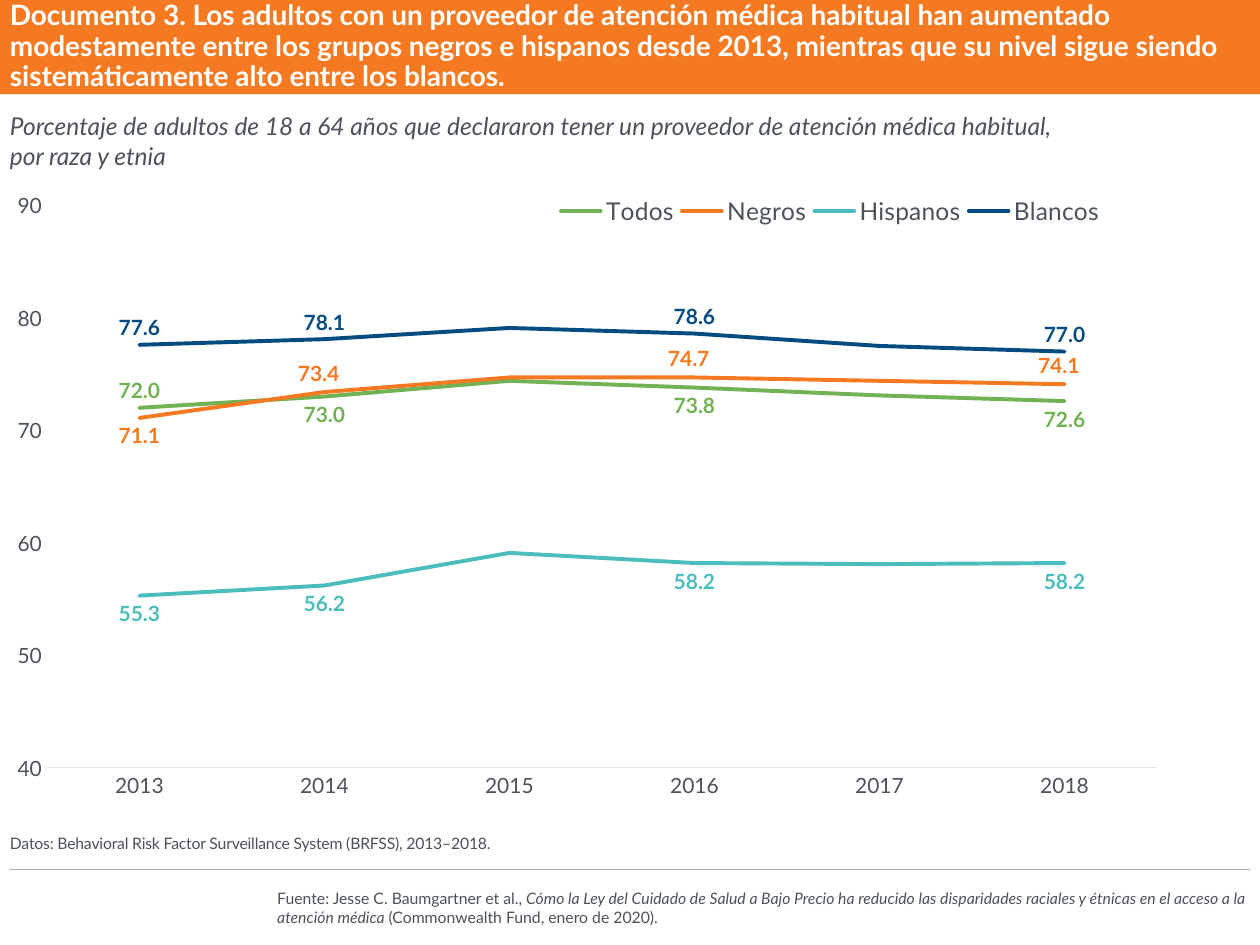
from lxml.etree import SubElement as Sub
from pptx import Presentation
from pptx.chart.data import CategoryChartData as Data
from pptx.dml.color import RGBColor as Rgb
from pptx.enum.chart import XL_CHART_TYPE as Kind, XL_LABEL_POSITION as Pos
from pptx.enum.chart import XL_LEGEND_POSITION as Side, XL_TICK_MARK as Tick
from pptx.enum.shapes import MSO_CONNECTOR as Link, MSO_SHAPE as Form
from pptx.enum.text import MSO_ANCHOR as Anchor, PP_ALIGN as Align
from pptx.oxml.ns import qn
from pptx.oxml.xmlchemy import OxmlElement as Elem
from pptx.util import Cm, Pt

FACE = "Lato"
INK, ORANGE, WHITE = "4C515A", "F47920", "FFFFFF"
YEARS = ["2013", "2014", "2015", "2016", "2017", "2018"]
UP, DOWN = Pos.ABOVE, Pos.BELOW
LINES = [
    ("Todos", "71B254", DOWN, UP, [72, 73, 74.4, 73.8, 73.1, 72.6]),
    ("Negros", ORANGE, UP, DOWN, [71.1, 73.4, 74.7, 74.7, 74.4, 74.1]),
    ("Hispanos", "4ABDBC", DOWN, DOWN, [55.3, 56.2, 59.1, 58.2, 58.1, 58.2]),
    ("Blancos", "044C7F", UP, UP, [77.6, 78.1, 79.1, 78.6, 77.5, 77]),
]


def paint(target, color):
    target.rgb = Rgb.from_string(color)


def style(font, size, color=INK, bold=False, italic=False):
    font.name, font.size = FACE, Pt(size)
    font.bold, font.italic = bold, italic
    paint(font.color, color)


def write(para, text, size, spc=None, **look):
    for i, part in enumerate(text.split("\n")):
        if i:
            para.add_line_break()
        run = para.add_run()
        run.text = part
        style(run.font, size, **look)
        if spc is not None:
            run.font._element.set("spc", str(spc))


def place(shape, box):
    shape.left, shape.top, shape.width, shape.height = [Cm(v) for v in box]


def set_up(shape, anchor):
    frame = shape.text_frame
    frame.word_wrap = True
    frame.vertical_anchor = anchor
    frame.margin_left = frame.margin_right = 0
    frame.margin_top = frame.margin_bottom = 0
    para = frame.paragraphs[0]
    para.alignment = Align.LEFT
    return para


def add_text(slide, box):
    return set_up(slide.shapes.add_textbox(*[Cm(v) for v in box]), Anchor.MIDDLE)


def add_band(slide, box):
    band = slide.shapes.add_shape(Form.RECTANGLE, *[Cm(v) for v in box])
    band.shadow.inherit = False
    band.fill.solid()
    paint(band.fill.fore_color, ORANGE)
    band.line.fill.background()
    slide.shapes._spTree.insert(2, band._element)


def add_rule(slide, left, right, y):
    rule = slide.shapes.add_connector(Link.STRAIGHT, Cm(left), Cm(y), Cm(right), Cm(y))
    rule.line.width = Pt(0.75)
    paint(rule.line.color, "ABABAB")
    Sub(rule._element.spPr, qn("a:effectLst"))


def lay_out(parent, spot, inner=False, **sizes):
    for old in parent.findall(qn("c:layout")):
        parent.remove(old)
    layout = Elem("c:layout")
    manual = Sub(layout, qn("c:manualLayout"))
    if inner:
        Sub(manual, qn("c:layoutTarget")).set("val", "inner")
    if "w" in sizes:
        for mode in ("xMode", "yMode"):
            Sub(manual, qn("c:" + mode)).set("val", "edge")
    for key, val in sizes.items():
        Sub(manual, qn("c:" + key)).set("val", str(val))
    parent.insert(spot, layout)


def label(line, color, main, first):
    tags = line.data_labels
    tags.show_value = True
    tags.number_format, tags.number_format_is_linked = "#,##0.0", False
    tags.position = main
    style(tags.font, 12, color, bold=True)
    for idx in (4, 2):
        gone = Elem("c:dLbl")
        Sub(gone, qn("c:idx")).set("val", str(idx))
        Sub(gone, qn("c:delete")).set("val", "1")
        tags._element.insert(0, gone)
    if first != main:
        tag = line.points[0].data_label
        style(tag.font, 12, color, bold=True)
        tag.position = first


def nudge(line, color):
    for idx in (1, 3, 5):
        tag = line.points[idx].data_label
        style(tag.font, 12, color, bold=True)
        tag.position = UP
        lay_out(tag._get_or_add_dLbl(), 1, x=-0.005, y=-0.003)


def add_lines(slide, box):
    data = Data(number_format="#,##0.0")
    data.categories = YEARS
    for name, _, _, _, vals in LINES:
        data.add_series(name, vals)
    chart = slide.shapes.add_chart(Kind.LINE, *[Cm(v) for v in box], data).chart
    chart.has_title = False
    style(chart.font, 10)
    chart.plots[0].vary_by_categories = False

    for line, (name, color, main, first, _) in zip(chart.plots[0].series, LINES):
        line.smooth = False
        line.format.line.width = Pt(2.25)
        paint(line.format.line.color, color)
        line.format.line._get_or_add_ln().set("cap", "rnd")
        label(line, color, main, first)
        if name == "Negros":
            nudge(line, color)

    cat, val = chart.category_axis, chart.value_axis
    for axis in (cat, val):
        axis.major_tick_mark = axis.minor_tick_mark = Tick.NONE
        axis.has_major_gridlines = False
        style(axis.tick_labels.font, 12)
    cat.format.line.width = Pt(0.75)
    paint(cat.format.line.color, "E3E5E7")
    val.format.line.fill.background()
    val.minimum_scale, val.maximum_scale, val.major_unit = 40, 90, 10
    val.tick_labels.number_format = "0"
    val.tick_labels.number_format_is_linked = False

    chart.has_legend = True
    key = chart.legend
    key.position = Side.RIGHT
    key.include_in_layout = False
    style(key.font, 14)
    lay_out(key._element, 1, x=0.47, y=0.01, w=0.48, h=0.05)
    area = chart._chartSpace.chart.plotArea
    lay_out(area, 0, True, x=0.032, y=0.026, w=0.961, h=0.893)


def main():
    deck = Presentation()
    deck.slide_width, deck.slide_height = Cm(25.4), Cm(19.05)
    slide = deck.slides.add_slide(deck.slide_layouts[1])
    add_band(slide, (0, 0, 25.4, 1.9))

    title, body = slide.placeholders
    place(title, (0.2, 0, 25, 1.9))
    para = set_up(title, Anchor.MIDDLE)
    para.line_spacing = 0.9
    write(para, "Documento 3. Los adultos con un proveedor de atención médica habitual "
          "han aumentado modestamente entre los grupos negros e hispanos desde 2013, "
          "mientras que su nivel sigue siendo sistemáticamente alto entre los blancos.",
          16, color=WHITE, bold=True)

    place(body, (0.2, 15.82, 25, 1.37))
    para = set_up(body, Anchor.BOTTOM)
    props = para._p.get_or_add_pPr()
    props.set("marL", "0")
    props.set("indent", "0")
    Sub(props, qn("a:buNone"))
    para.line_spacing, para.space_before, para.space_after = 0.9, Pt(0), Pt(6)
    write(para, "Datos: Behavioral Risk Factor Surveillance System (BRFSS), 2013–2018.",
          9, spc=-10)

    add_lines(slide, (0.2, 3.81, 23.29, 12.7))
    write(add_text(slide, (0.2, 2.24, 21.72, 1.19)),
          "Porcentaje de adultos de 18 a 64 años que declararon tener un proveedor "
          "de atención médica habitual, \npor raza y etnia", 14, italic=True)

    add_rule(slide, 0.2, 25.2, 17.53)
    para = add_text(slide, (5.59, 17.91, 19.69, 0.76))
    write(para, "Fuente: Jesse C. Baumgartner et al., ", 9)
    write(para, "Cómo la Ley del Cuidado de Salud a Bajo Precio ha reducido las "
          "disparidades raciales y étnicas en el acceso a la atención médica", 9, italic=True)
    write(para, " (Commonwealth Fund, enero de 2020).", 9)
    deck.save("out.pptx")


if __name__ == "__main__":
    main()
